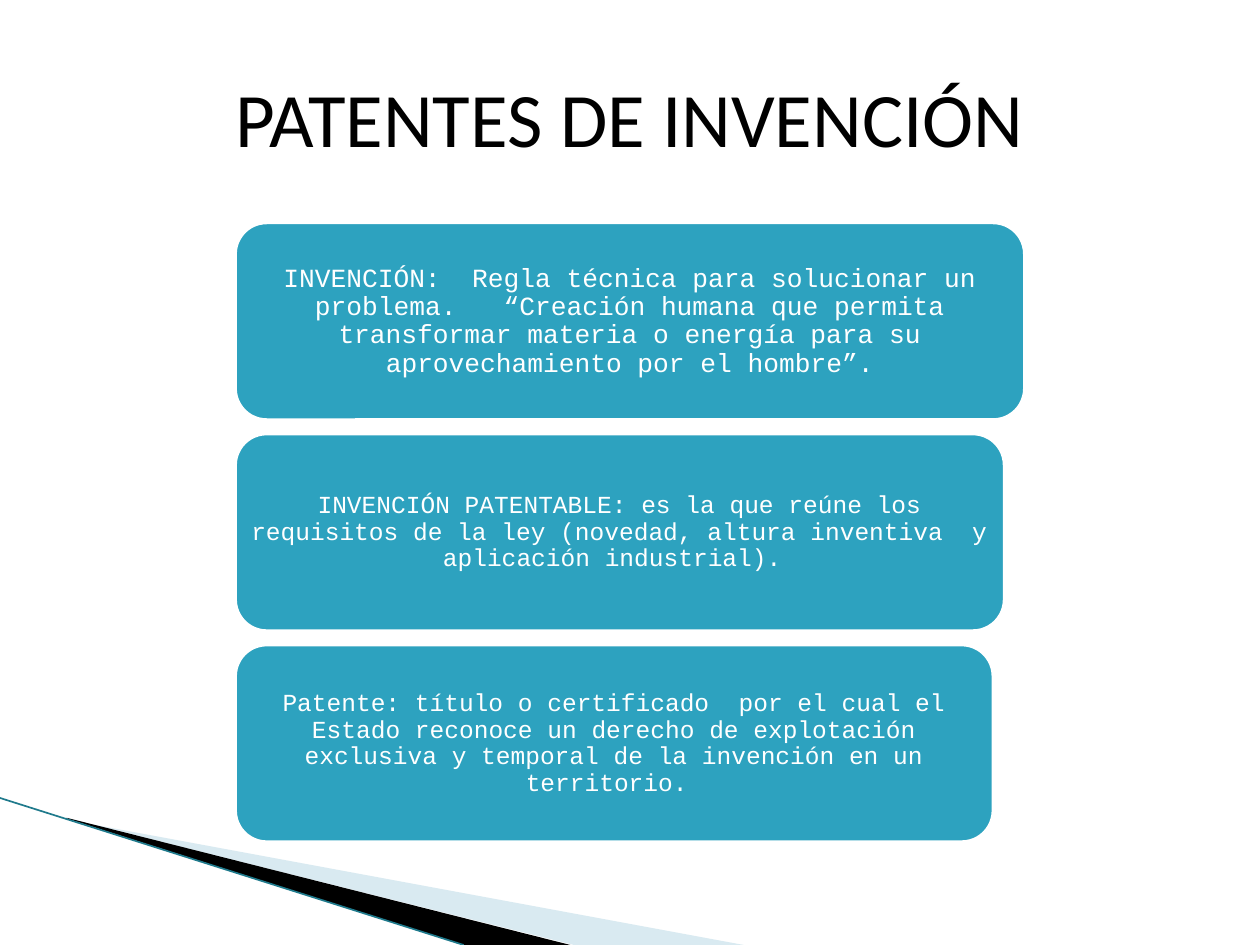
from lxml import etree
from pptx import Presentation
from pptx.dml.color import RGBColor
from pptx.enum import shapes, text
from pptx.oxml import ns
from pptx.util import Pt


def color(value):
    return RGBColor.from_string(value)


class Deck:
    title_font = "Calibri"
    body_font = "Courier New"
    black = "000000"
    white = "FFFFFF"
    teal = "2DA2BF"
    dark_teal = "1F7A8C"
    pale_blue = "A0CBDC"

    def __init__(self, prs):
        self.s = prs.slides.add_slide(prs.slide_layouts[5])
        bg = self.s.background.fill
        bg.solid()
        bg.fore_color.rgb = color(self.white)

    def format_text(self, tf, name, size, fill, insets):
        tf.word_wrap = True
        tf.auto_size = text.MSO_AUTO_SIZE.NONE
        tf.vertical_anchor = text.MSO_ANCHOR.MIDDLE
        tf.margin_left = tf.margin_right = Pt(insets[0])
        tf.margin_top = tf.margin_bottom = Pt(insets[1])
        p = tf.paragraphs[0]
        p.alignment = text.PP_ALIGN.CENTER
        for r in p.runs:
            r.font.name = name
            r.font.size = Pt(size)
            r.font.color.rgb = color(fill)
        return p

    def title(self, words, left, top, width, height):
        sp = self.s.shapes.title
        sp.left, sp.top, sp.width, sp.height = map(Pt, (left, top, width, height))
        sp.text_frame.text = words
        self.format_text(sp.text_frame, self.title_font, 44, self.black, (7.2, 3.6))

    def wedge(self, points, fill, alpha=None):
        corners = [(Pt(x), Pt(y)) for x, y in points]
        builder = self.s.shapes.build_freeform(*corners[0])
        builder.add_line_segments(corners[1:])
        sp = builder.convert_to_shape()
        sp.shadow.inherit = False
        sp.fill.solid()
        sp.fill.fore_color.rgb = color(fill)
        sp.line.fill.background()
        if alpha:
            clr = sp._element.spPr.find(".//" + ns.qn("a:srgbClr"))
            etree.SubElement(clr, ns.qn("a:alpha")).set("val", str(alpha * 1000))

    def line(self, x1, y1, x2, y2):
        sp = self.s.shapes.add_connector(
            shapes.MSO_CONNECTOR.STRAIGHT, Pt(x1), Pt(y1), Pt(x2), Pt(y2))
        sp.line.color.rgb = color(self.dark_teal)
        sp.line.width = Pt(0.95)
        etree.SubElement(sp._element.spPr, ns.qn("a:effectLst"))

    def card(self, words, left, top, width, height, size):
        sp = self.s.shapes.add_shape(
            shapes.MSO_SHAPE.ROUNDED_RECTANGLE, Pt(left), Pt(top), Pt(width), Pt(height))
        sp.shadow.inherit = False
        sp.fill.solid()
        sp.fill.fore_color.rgb = color(self.teal)
        sp.line.color.rgb = color(self.white)
        sp.line.width = Pt(4.33)
        sp.text_frame.text = words
        p = self.format_text(sp.text_frame, self.body_font, size, self.white, (2, 2))
        p.line_spacing = 0.9


def main():
    prs = Presentation()
    prs.slide_width, prs.slide_height = Pt(720), Pt(540)
    deck = Deck(prs)
    deck.wedge([(39.6, 468.7), (425, 540), (328, 540), (39.6, 468)], deck.pale_blue, 40)
    deck.wedge([(38, 467.3), (326, 540), (265, 540), (39, 468)], deck.black)
    deck.line(0, 456, 265, 540)
    deck.title("PATENTES DE INVENCIÓN", 36, 21.6, 648, 90)
    cards = [
        ("INVENCIÓN:  Regla técnica para solucionar un problema.   “Creación humana "
         "que permita transformar materia o energía para su aprovechamiento por el "
         "hombre”.", 453.6, 15),
        ("INVENCIÓN PATENTABLE: es la que reúne los requisitos de la ley (novedad, "
         "altura inventiva  y aplicación industrial). ", 442, 14),
        ("Patente: título o certificado  por el cual el Estado reconoce un derecho de "
         "explotación exclusiva y temporal de la invención en un territorio. ", 435.6, 14),
    ]
    for i, (words, width, size) in enumerate(cards):
        deck.card(words, 133.2, 126 + i * 120.6, width, 115.2, size)
    prs.save("out.pptx")


if __name__ == "__main__":
    main()
